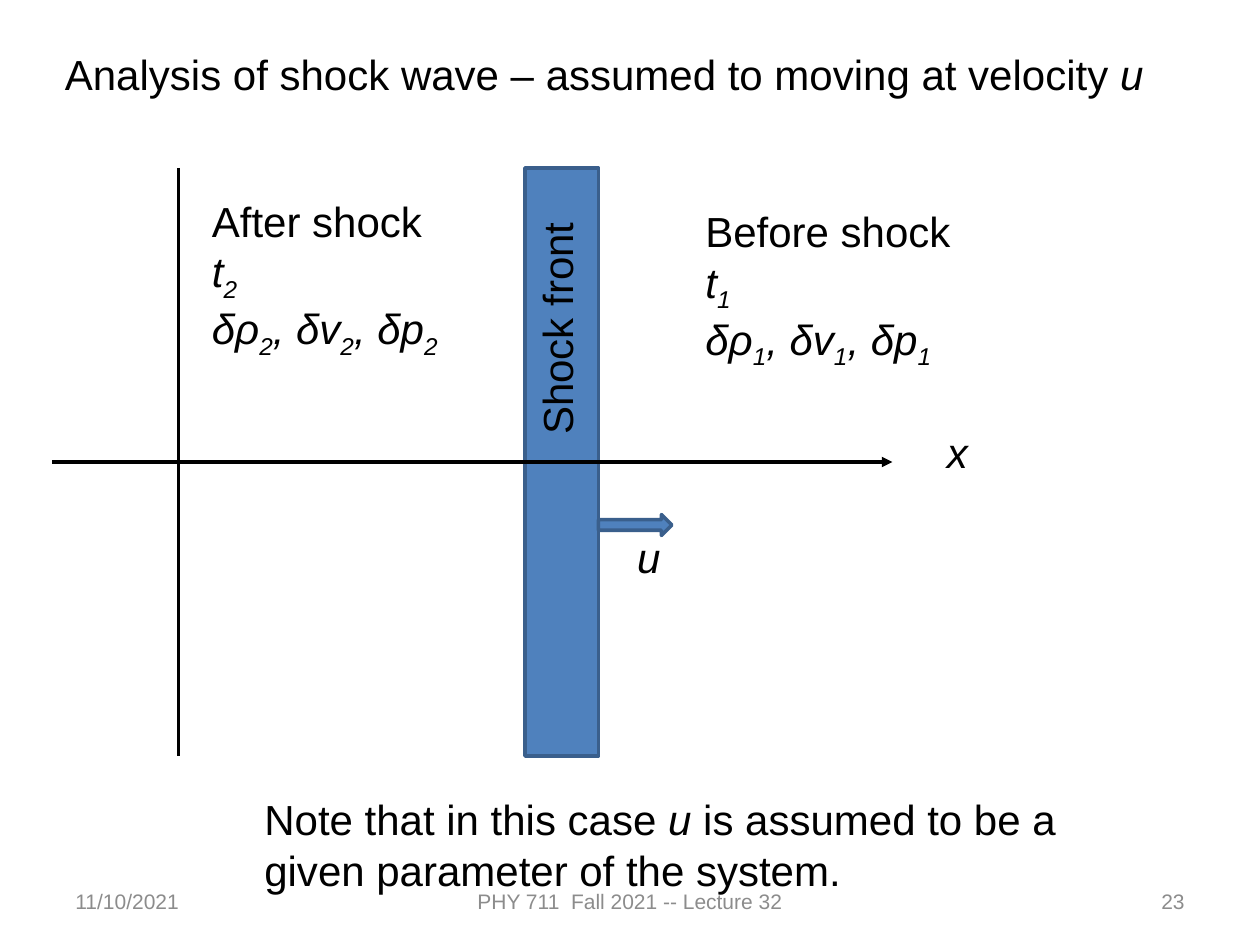
from lxml.etree import SubElement
from pptx import Presentation
from pptx.dml.color import RGBColor
from pptx.enum.shapes import MSO_CONNECTOR as Connector, MSO_SHAPE as Shape
from pptx.enum.text import MSO_ANCHOR as Anchor, PP_ALIGN as Align
from pptx.oxml.ns import qn
from pptx.util import Inches, Pt

COLUMNS, ROWS = 120, 90
WIDTH, HEIGHT = Inches(10), Inches(7.5)
BLACK, GRAY, BLUE, EDGE = "000000", "8C8C8C", "4F81BD", "3A5F8C"

BODY = {"size": Pt(24), "name": "Arial"}
SMALL = {"size": Pt(12), "name": "Arial"}

# In the lines below, * switches italic and _ lowers the next character.
FOOTERS = [
    ("11/10/2021", 6, 28, Align.LEFT),
    ("PHY 711  Fall 2021 -- Lecture 32", 41, 38, Align.CENTER),
    ("23", 86, 28, Align.RIGHT),
]
STATES = [("After shock", 2, (19, 18, 26, 16)), ("Before shock", 1, (66, 19, 26, 20))]
LABELS = [
    (["Analysis of shock wave – assumed to moving at velocity *u"], (5, 4, 112, 6)),
    (["*x"], (89, 40, 11, 6)),
    (["*u"], (59.5, 50, 9, 6)),
    (["Note that in this case *u* is assumed to be a given parameter of the system."],
     (24, 75, 85, 11)),
] + [
    ([title, f"*t_{n}", f"*δρ_{n}, δv_{n}, δp_{n}"], place) for title, n, place in STATES
]
FRONT = (50, 16, 7, 56)
FRONT_LABEL = (50, 21, 7.3, 21.6)
VELOCITY_ARROW = (57, 49, 7, 2)
BOUNDARY = (17, 16, 17, 72)
X_AXIS = (5, 44, 85, 44)


def color(hex_value):
    return RGBColor.from_string(hex_value)


def on_grid(a, b, c, d):
    return [int(v * unit) for v, unit in zip((a, b, c, d), (WIDTH / COLUMNS, HEIGHT / ROWS) * 2)]


def marked_runs(line):
    for i, part in enumerate(line.split("*")):
        for j, piece in enumerate(part.split("_")):
            if j:
                yield piece[0], i % 2 == 1, True
                piece = piece[1:]
            if piece:
                yield piece, i % 2 == 1, False


def add_text(slide, lines, place, font=BODY, ink=BLACK, align=Align.LEFT,
             anchor=Anchor.TOP, turned=False):
    frame = slide.shapes.add_textbox(*on_grid(*place)).text_frame
    for key, value in {"word_wrap": not turned, "vertical_anchor": anchor}.items():
        setattr(frame, key, value)
    if turned:
        frame._txBody.bodyPr.set("vert", "vert270")
    for i, line in enumerate(lines):
        paragraph = frame.add_paragraph() if i else frame.paragraphs[0]
        paragraph.alignment = align
        for words, italic, lowered in marked_runs(line):
            run = paragraph.add_run()
            run.text = words
            for key, value in {**font, "italic": italic}.items():
                setattr(run.font, key, value)
            run.font.color.rgb = color(ink)
            if lowered:
                run.font._element.set("baseline", "-25000")


def add_block(slide, preset, place):
    block = slide.shapes.add_shape(preset, *on_grid(*place))
    block.shadow.inherit = False
    block.fill.solid()
    block.fill.fore_color.rgb = color(BLUE)
    block.line.color.rgb = color(EDGE)
    block.line.width = Pt(2)


def add_line(slide, ends, arrow=False):
    line = slide.shapes.add_connector(Connector.STRAIGHT, *on_grid(*ends))
    line.line.color.rgb = color(BLACK)
    line.line.width = Pt(2)
    if arrow:
        SubElement(line.line._get_or_add_ln(), qn("a:tailEnd"), type="triangle")
    SubElement(line._element.spPr, qn("a:effectLst"))


def main():
    deck = Presentation()
    deck.slide_width, deck.slide_height = WIDTH, HEIGHT
    slide = deck.slides.add_slide(deck.slide_layouts[6])
    for words, left, width, align in FOOTERS:
        add_text(slide, [words], (left, 83.4, width, 4.8), SMALL, GRAY, align, Anchor.MIDDLE)
    add_line(slide, BOUNDARY)
    add_block(slide, Shape.RECTANGLE, FRONT)
    add_line(slide, X_AXIS, arrow=True)
    add_block(slide, Shape.RIGHT_ARROW, VELOCITY_ARROW)
    add_text(slide, ["Shock front"], FRONT_LABEL, turned=True)
    for lines, place in LABELS:
        add_text(slide, lines, place)
    deck.save("out.pptx")


if __name__ == "__main__":
    main()
